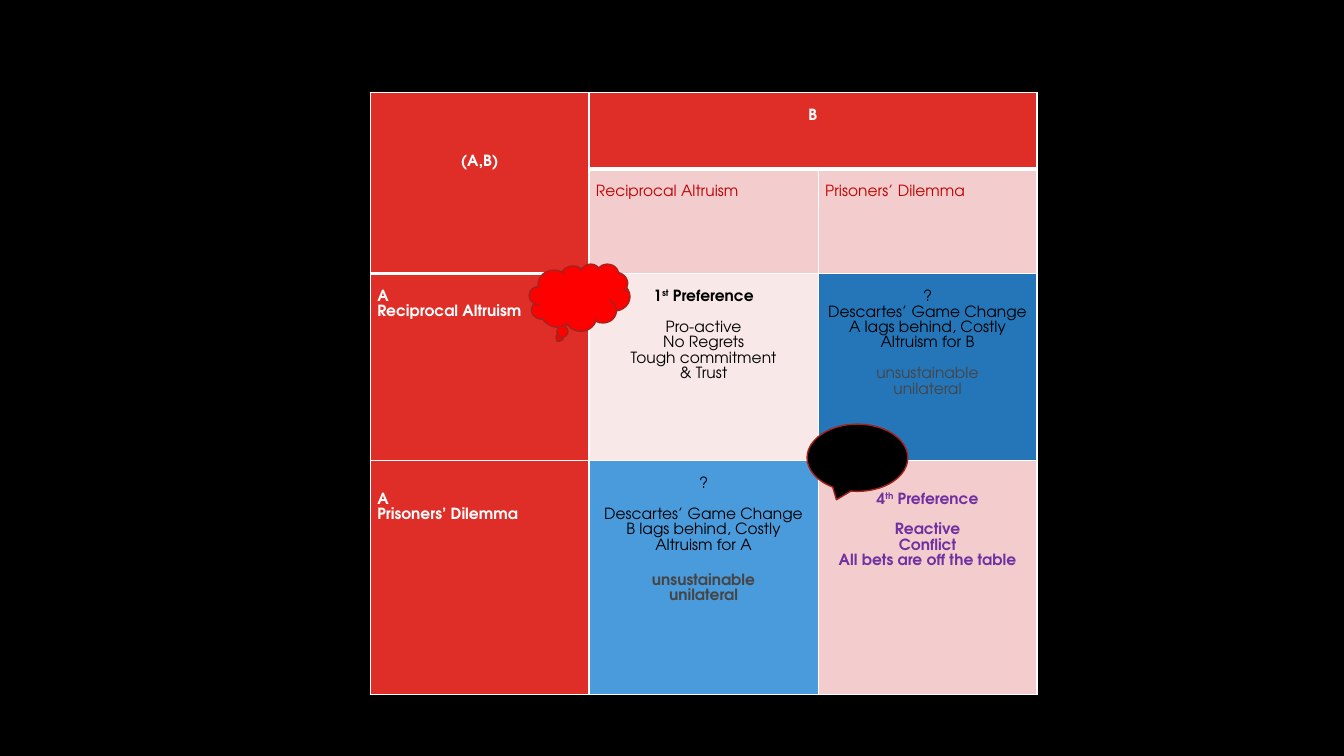
from dataclasses import dataclass

from lxml.etree import SubElement
from pptx import Presentation
from pptx.dml.color import RGBColor
from pptx.enum.shapes import MSO_SHAPE
from pptx.enum.text import PP_ALIGN
from pptx.oxml.ns import qn
from pptx.util import Pt

BLACK = RGBColor(0x00, 0x00, 0x00)
WHITE = RGBColor(0xFF, 0xFF, 0xFF)
RED = RGBColor(0xDF, 0x2E, 0x28)
DARK_RED = RGBColor(0xC0, 0x00, 0x00)
BRIGHT_RED = RGBColor(0xFF, 0x00, 0x00)
OUTLINE_RED = RGBColor(0xA5, 0x22, 0x1E)
PINK = RGBColor(0xF3, 0xCD, 0xCD)
PALE_PINK = RGBColor(0xF9, 0xE8, 0xE8)
DARK_BLUE = RGBColor(0x24, 0x76, 0xB9)
LIGHT_BLUE = RGBColor(0x4A, 0x9B, 0xDC)
GREY = RGBColor(0x45, 0x45, 0x45)
PURPLE = RGBColor(0x70, 0x30, 0xA0)

LINE = 11.1  # height of one text line in points


@dataclass
class Line:
    """One paragraph; a text in three parts has its middle part raised."""
    text: str | tuple
    color: RGBColor = BLACK
    bold: bool = False
    gap: float = 0


@dataclass
class CellContent:
    row: int
    column: int
    fill: RGBColor
    lines: list
    centered: bool = True
    top: float = LINE
    thick: str = ""


CELLS = [
    CellContent(0, 0, RED, [Line("(A,B)", WHITE, True)], top=4 * LINE),
    CellContent(0, 1, RED, [Line("B", WHITE, True)], thick="B"),
    CellContent(0, 2, RED, [], thick="B"),
    CellContent(1, 0, RED, [], thick="B"),
    CellContent(1, 1, PINK, [Line("Reciprocal Altruism", DARK_RED)], centered=False, thick="T"),
    CellContent(1, 2, PINK, [Line("Prisoners’ Dilemma", DARK_RED)], centered=False, thick="T"),
    CellContent(2, 0, RED, [Line("A", WHITE, True), Line("Reciprocal Altruism", WHITE, True)],
                centered=False, thick="T"),
    CellContent(2, 1, PALE_PINK, [
        Line(("1", "st", " Preference"), bold=True),
        Line("Pro-active", gap=LINE),
        Line("No Regrets"),
        Line("Tough commitment"),
        Line("& Trust"),
    ]),
    CellContent(2, 2, DARK_BLUE, [
        Line("?"),
        Line("Descartes’ Game Change"),
        Line("A lags behind, Costly Altruism for B"),
        Line("unsustainable", GREY, gap=LINE),
        Line("unilateral", GREY),
    ]),
    CellContent(3, 0, RED, [Line("A", WHITE, True), Line("Prisoners’ Dilemma", WHITE, True)],
                centered=False, top=2 * LINE),
    CellContent(3, 1, LIGHT_BLUE, [
        Line("?"),
        Line("Descartes’ Game Change", gap=LINE),
        Line("B lags behind, Costly Altruism for A"),
        Line("unsustainable", GREY, True, gap=14),
        Line("unilateral", GREY, True),
    ]),
    CellContent(3, 2, PINK, [
        Line(("4", "th", " Preference"), PURPLE, True),
        Line("Reactive", PURPLE, True, gap=LINE),
        Line("Conflict", PURPLE, True),
        Line("All bets are off the table", PURPLE, True),
    ], top=2 * LINE),
]


class SlideBuilder:
    font_name = "TeX Gyre Adventor"
    font_size = Pt(11)
    line_spacing = 1.07

    def __init__(self, slide):
        self.slide = slide

    def background(self, color):
        fill = self.slide.background.fill
        fill.solid()
        fill.fore_color.rgb = color

    def table(self, left, top, widths, heights):
        frame = self.slide.shapes.add_table(len(heights), len(widths), Pt(left), Pt(top),
                                            Pt(sum(widths)), Pt(sum(heights)))
        table = frame.table
        table.first_row = table.horz_banding = False
        for column, width in zip(table.columns, widths):
            column.width = Pt(width)
        for row, height in zip(table.rows, heights):
            row.height = Pt(height)
        return table

    def cell(self, table, content):
        cell = table.cell(content.row, content.column)
        cell.margin_left = cell.margin_right = Pt(5)
        cell.margin_top, cell.margin_bottom = Pt(content.top), Pt(0)
        self.borders(cell, content.thick)
        cell.fill.solid()
        cell.fill.fore_color.rgb = content.fill
        for index, line in enumerate(content.lines):
            frame = cell.text_frame
            para = frame.add_paragraph() if index else frame.paragraphs[0]
            self.paragraph(para, line, content.centered)

    def borders(self, cell, thick):
        properties = cell._tc.get_or_add_tcPr()
        for side in "LRTB":
            width = Pt(3 if side == thick else 1)
            border = SubElement(properties, qn(f"a:ln{side}"), w=str(width))
            fill = SubElement(border, qn("a:solidFill"))
            SubElement(fill, qn("a:srgbClr"), val=str(WHITE))

    def paragraph(self, para, line, centered):
        para.alignment = PP_ALIGN.CENTER if centered else PP_ALIGN.LEFT
        para.line_spacing = self.line_spacing
        if line.gap:
            para.space_before = Pt(line.gap)
        para.font.name = self.font_name
        para.font.size = self.font_size
        para.font.bold = line.bold
        para.font.color.rgb = line.color
        parts = (line.text,) if isinstance(line.text, str) else line.text
        for index, part in enumerate(parts):
            span = para.add_run()
            span.text = part
            if index == 1:
                span._r.get_or_add_rPr().set("baseline", "30000")

    def callout(self, kind, left, top, color):
        shape = self.slide.shapes.add_shape(kind, Pt(left), Pt(top), Pt(72), Pt(48))
        shape.shadow.inherit = False
        shape.fill.solid()
        shape.fill.fore_color.rgb = color
        shape.line.color.rgb = OUTLINE_RED
        shape.line.width = Pt(1)


def main():
    deck = Presentation()
    deck.slide_width, deck.slide_height = Pt(960), Pt(540)
    builder = SlideBuilder(deck.slides.add_slide(deck.slide_layouts[6]))
    builder.background(BLACK)

    table = builder.table(264.5, 66, [156.2, 163.8, 156.2], [54.5, 75, 133.5, 167])
    for content in CELLS:
        builder.cell(table, content)
    table.cell(0, 0).merge(table.cell(1, 0))
    table.cell(0, 1).merge(table.cell(0, 2))

    builder.callout(MSO_SHAPE.CLOUD_CALLOUT, 378, 188.5, BRIGHT_RED)
    builder.callout(MSO_SHAPE.OVAL_CALLOUT, 576.5, 303, BLACK)
    deck.save("out.pptx")


if __name__ == "__main__":
    main()
